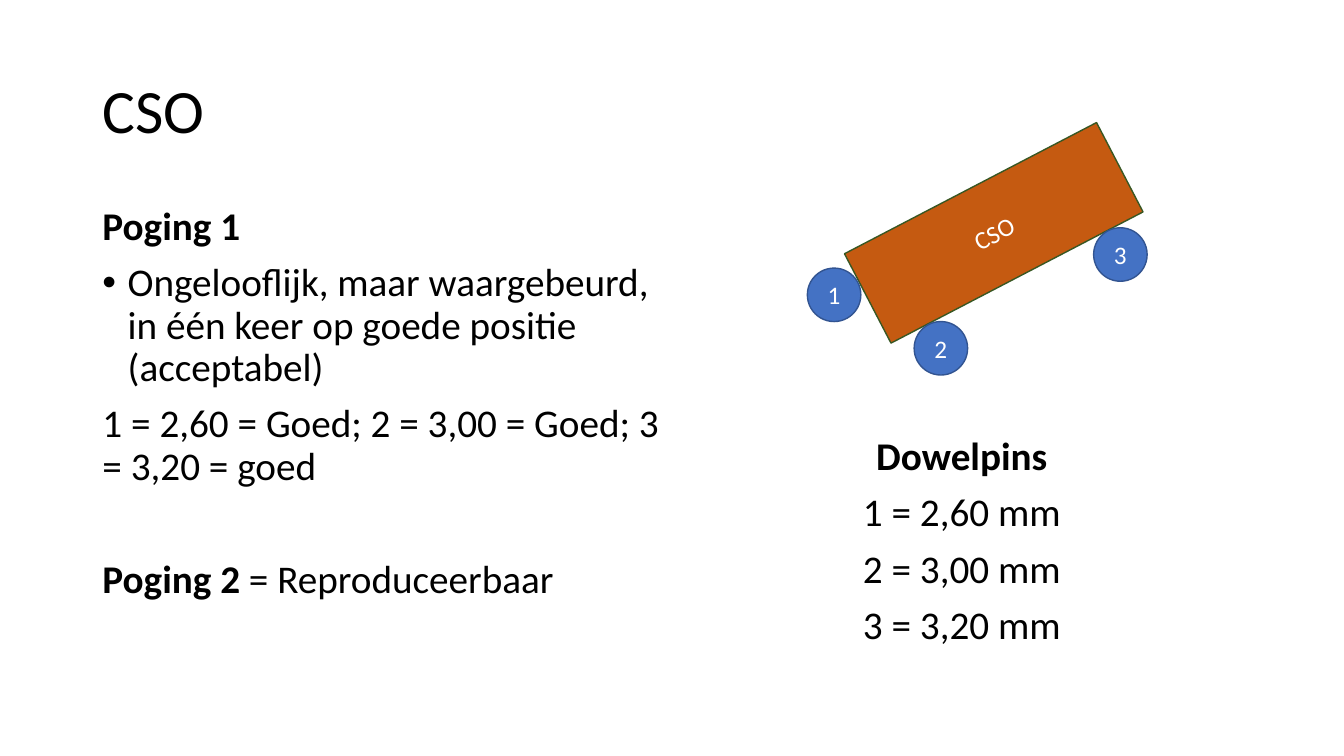
from pptx import Presentation
from pptx.dml.color import RGBColor
from pptx.enum.shapes import MSO_SHAPE
from pptx.enum.text import MSO_ANCHOR, MSO_AUTO_SIZE, PP_ALIGN
from pptx.oxml.xmlchemy import OxmlElement
from pptx.util import Pt

LEFT, CENTER = PP_ALIGN.LEFT, PP_ALIGN.CENTER
RECT, OVAL = MSO_SHAPE.RECTANGLE, MSO_SHAPE.OVAL

# Content
TITLE = "CSO"
# Each paragraph: runs as (text, bold), bulleted, space before
ATTEMPTS = [
    ([("Poging 1", True)], False, 10),
    ([("Ongelooflijk, maar waargebeurd, in één keer op goede positie (acceptabel)", False)], True, 10),
    ([("1 = 2,60 = Goed; 2 = 3,00 = Goed; 3 = 3,20 = goed", False)], False, 10),
    ([("Poging 2 ", True), ("= Reproduceerbaar", False)], False, 50.4),
]
DOWEL_HEADING = "Dowelpins"
DOWEL_SIZES = ["2,60", "3,00", "3,20"]
DOWELS = [([(DOWEL_HEADING, True)], False, 10)] + [
    ([(f"{number} = {size} mm", False)], False, 10)
    for number, size in enumerate(DOWEL_SIZES, 1)
]

# Theme
THEME = {
    "font": "Calibri", "title": 44, "body": 28, "label": 18,
    "text": "000000", "on_shape": "FFFFFF",
    "block": "C55A11", "block_line": "385723",
    "pin": "4472C4", "pin_line": "325491",
}

# Layout in points: left, top, width, height
MARGIN, COLUMN = 66, 414
TITLE_BOX = (MARGIN, 28.8, 2 * COLUMN, 104.4)
ATTEMPTS_BOX = (MARGIN, 144, COLUMN, 342.7)
DOWELS_BOX = (MARGIN + COLUMN, 308.2, COLUMN, 185.8)
BLOCK_BOX, BLOCK_ANGLE = (608.4, 130.3, 203, 72), 332.5
PIN_SIZE = 38.2
PIN_CORNERS = [(576.7, 191.5), (653, 229.7), (781.2, 162.7)]
INDENT = 18


def color(name):
    return RGBColor.from_string(THEME[name])


def place(sp, box):
    sp.left, sp.top, sp.width, sp.height = map(Pt, box)


def style(r, size, ink="text", bold=False):
    r.font.name, r.font.size, r.font.bold = THEME["font"], Pt(THEME[size]), bold
    r.font.color.rgb = color(ink)


def set_bullet(p, bulleted):
    pPr = p._p.get_or_add_pPr()
    indent = Pt(INDENT) if bulleted else 0
    pPr.set("marL", str(indent))
    pPr.set("indent", str(-indent))
    bullet = OxmlElement("a:buChar" if bulleted else "a:buNone")
    if bulleted:
        bullet.set("char", "•")
    pPr.append(bullet)


def write(tf, paragraphs, align):
    tf.word_wrap = True
    for i, (runs, bulleted, gap) in enumerate(paragraphs):
        p = tf.add_paragraph() if i else tf.paragraphs[0]
        p.alignment, p.line_spacing, p.space_before = align, 0.9, Pt(gap)
        set_bullet(p, bulleted)
        for text, bold in runs:
            r = p.add_run()
            r.text = text
            style(r, "body", bold=bold)


def add_part(group, kind, box, label, fill):
    sp = group.shapes.add_shape(kind, *map(Pt, box))
    sp.shadow.inherit = False
    sp.fill.solid()
    sp.fill.fore_color.rgb = color(fill)
    sp.line.color.rgb = color(fill + "_line")
    sp.line.width = Pt(1)
    tf = sp.text_frame
    tf.text = label
    tf.vertical_anchor = MSO_ANCHOR.MIDDLE
    p = tf.paragraphs[0]
    p.alignment = CENTER
    style(p.runs[0], "label", "on_shape")
    return sp


prs = Presentation()
prs.slide_width, prs.slide_height = Pt(960), Pt(540)
s = prs.slides.add_slide(prs.slide_layouts[1])

# Title
title = s.shapes.title
place(title, TITLE_BOX)
tf = title.text_frame
tf.text = TITLE
tf.vertical_anchor = MSO_ANCHOR.MIDDLE
p = tf.paragraphs[0]
p.alignment, p.line_spacing = LEFT, 0.9
style(p.runs[0], "title")

# Attempts
body = s.placeholders[1]
place(body, ATTEMPTS_BOX)
body.text_frame.auto_size = MSO_AUTO_SIZE.NONE
write(body.text_frame, ATTEMPTS, LEFT)

# Tilted block resting on three dowel pins
group = s.shapes.add_group_shape()
block = add_part(group, RECT, BLOCK_BOX, TITLE, "block")
block.rotation = BLOCK_ANGLE
for number, corner in enumerate(PIN_CORNERS, 1):
    add_part(group, OVAL, (*corner, PIN_SIZE, PIN_SIZE), str(number), "pin")

# Dowel sizes
dowels = s.shapes.add_textbox(*map(Pt, DOWELS_BOX))
write(dowels.text_frame, DOWELS, CENTER)

prs.save("out.pptx")
